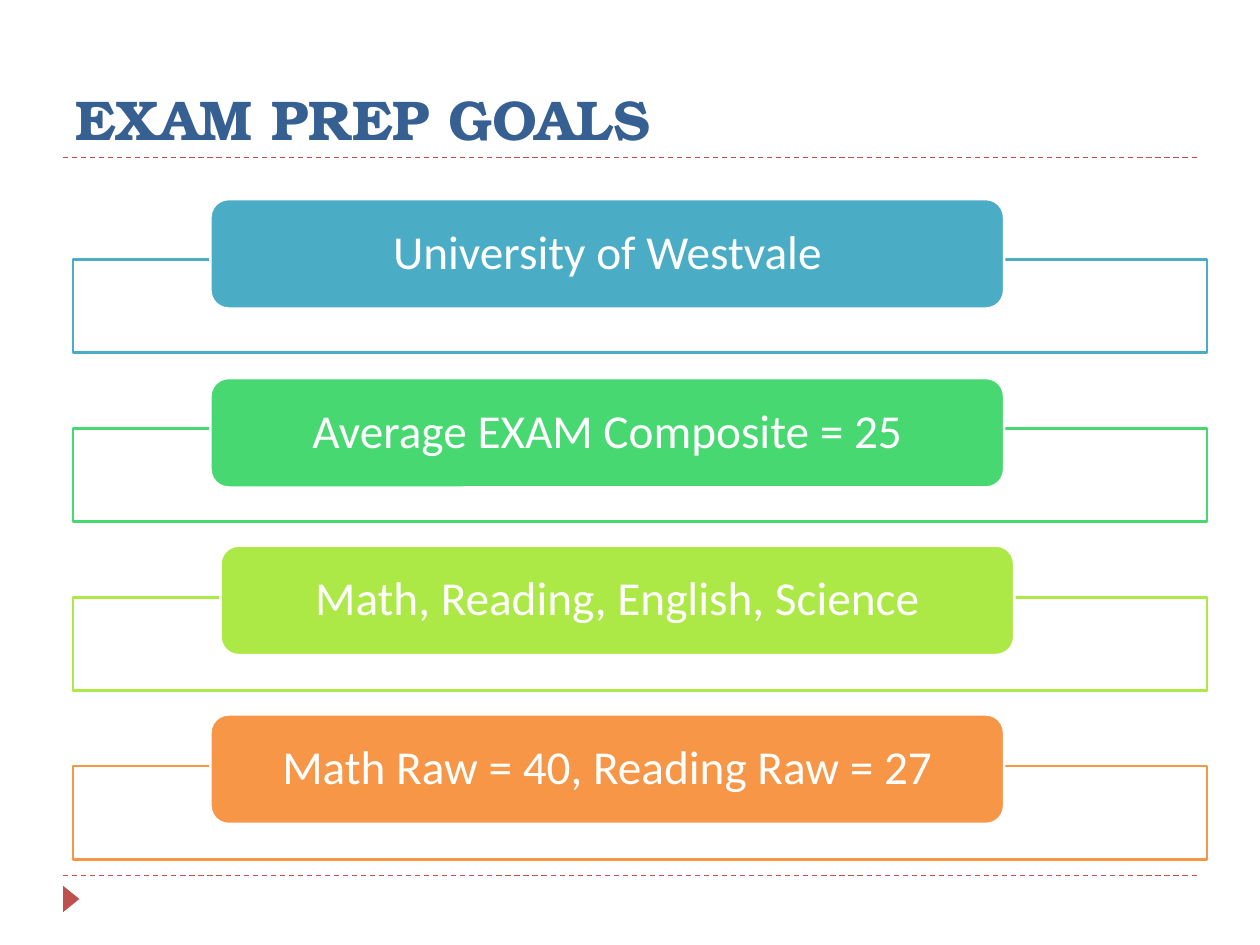
from lxml import etree
from pptx import Presentation
from pptx.dml.color import RGBColor
from pptx.enum.dml import MSO_LINE
from pptx.enum.shapes import MSO_CONNECTOR, MSO_SHAPE
from pptx.enum.text import MSO_ANCHOR as Anchor, PP_ALIGN as Align
from pptx.oxml.ns import qn
from pptx.util import Inches, Pt

WHITE = RGBColor(0xFF, 0xFF, 0xFF)
NAVY = RGBColor(0x37, 0x60, 0x92)
RED = RGBColor(0xC0, 0x50, 0x4D)
BLUE = RGBColor(0x4B, 0xAC, 0xC6)
GREEN = RGBColor(0x47, 0xD8, 0x72)
LIME = RGBColor(0xAC, 0xE9, 0x46)
ORANGE = RGBColor(0xF7, 0x96, 0x46)

GOALS = [
    ("University of Westvale", BLUE, 1.67, 1.58),
    ("Average EXAM Composite = 25", GREEN, 1.67, 3),
    ("Math, Reading, English, Science", LIME, 1.75, 4.33),
    ("Math Raw = 40, Reading Raw = 27", ORANGE, 1.67, 5.67),
]
FRAME_TOP = 2.06
FRAME_PITCH = 1.34


class GoalSlide:
    title_font = {"name": "TeX Gyre Bonum", "size": Pt(32), "bold": True}
    goal_font = {"name": "Calibri", "size": Pt(27)}
    goal_frame = {
        "word_wrap": True,
        "vertical_anchor": Anchor.MIDDLE,
        "margin_left": Inches(0.24),
        "margin_right": Inches(0.24),
        "margin_top": 0,
        "margin_bottom": 0,
    }
    goal_paragraph = {
        "alignment": Align.CENTER,
        "line_spacing": 0.9,
        "space_after": Pt(9.45),
    }

    def __init__(self, presentation):
        self.slide = presentation.slides.add_slide(presentation.slide_layouts[6])

    def apply(self, target, formats):
        for name, value in formats.items():
            setattr(target, name, value)

    def add_text(self, shape, text, font, color, frame_format, paragraph_format):
        self.apply(shape.text_frame, frame_format)
        paragraph = shape.text_frame.paragraphs[0]
        self.apply(paragraph, paragraph_format)
        run = paragraph.add_run()
        run.text = text
        self.apply(run.font, font)
        run.font.color.rgb = color

    def title(self, text, box):
        shape = self.slide.shapes.add_textbox(*map(Inches, box))
        frame_format = {"word_wrap": True, "vertical_anchor": Anchor.BOTTOM}
        self.add_text(shape, text, self.title_font, NAVY, frame_format, {})

    def rule(self, top):
        ends = map(Inches, (0.5, top, 9.5, top))
        connector = self.slide.shapes.add_connector(MSO_CONNECTOR.STRAIGHT, *ends)
        connector.line.color.rgb = RED
        self.apply(connector.line, {"width": Pt(0.75), "dash_style": MSO_LINE.DASH})
        etree.SubElement(connector._element.spPr, qn("a:effectLst"))

    def shape(self, kind, box, fill, line=None):
        shape = self.slide.shapes.add_shape(kind, *map(Inches, box))
        shape.shadow.inherit = False
        shape.fill.solid()
        shape.fill.fore_color.rgb = fill
        if line is None:
            shape.line.fill.background()
        else:
            shape.line.color.rgb = line
            shape.line.width = Pt(1.5)
        return shape

    def marker(self, box):
        self.shape(MSO_SHAPE.ISOSCELES_TRIANGLE, box, RED).rotation = 90

    def frame(self, top, color):
        shape = self.shape(MSO_SHAPE.RECTANGLE, (0.58, top, 9, 0.74), WHITE, color)
        fill_color = shape._element.spPr.find(qn("a:solidFill"))[0]
        etree.SubElement(fill_color, qn("a:alpha"), val="90000")

    def goal(self, text, color, left, top):
        box = (left, top, 6.3, 0.87)
        shape = self.shape(MSO_SHAPE.ROUNDED_RECTANGLE, box, color, WHITE)
        self.add_text(shape, text, self.goal_font, WHITE, self.goal_frame, self.goal_paragraph)


def main():
    presentation = Presentation()
    presentation.slide_width = Inches(10)
    presentation.slide_height = Inches(7.5)
    slide = GoalSlide(presentation)
    for top in (6.95, 1.25):
        slide.rule(top)
    slide.marker((0.46, 7.07, 0.21, 0.13))
    slide.title("EXAM PREP GOALS", (0.5, 0.17, 9, 1.08))
    for index, (text, color, left, top) in enumerate(GOALS):
        slide.frame(FRAME_TOP + index * FRAME_PITCH, color)
        slide.goal(text, color, left, top)
    presentation.save("out.pptx")


if __name__ == "__main__":
    main()
